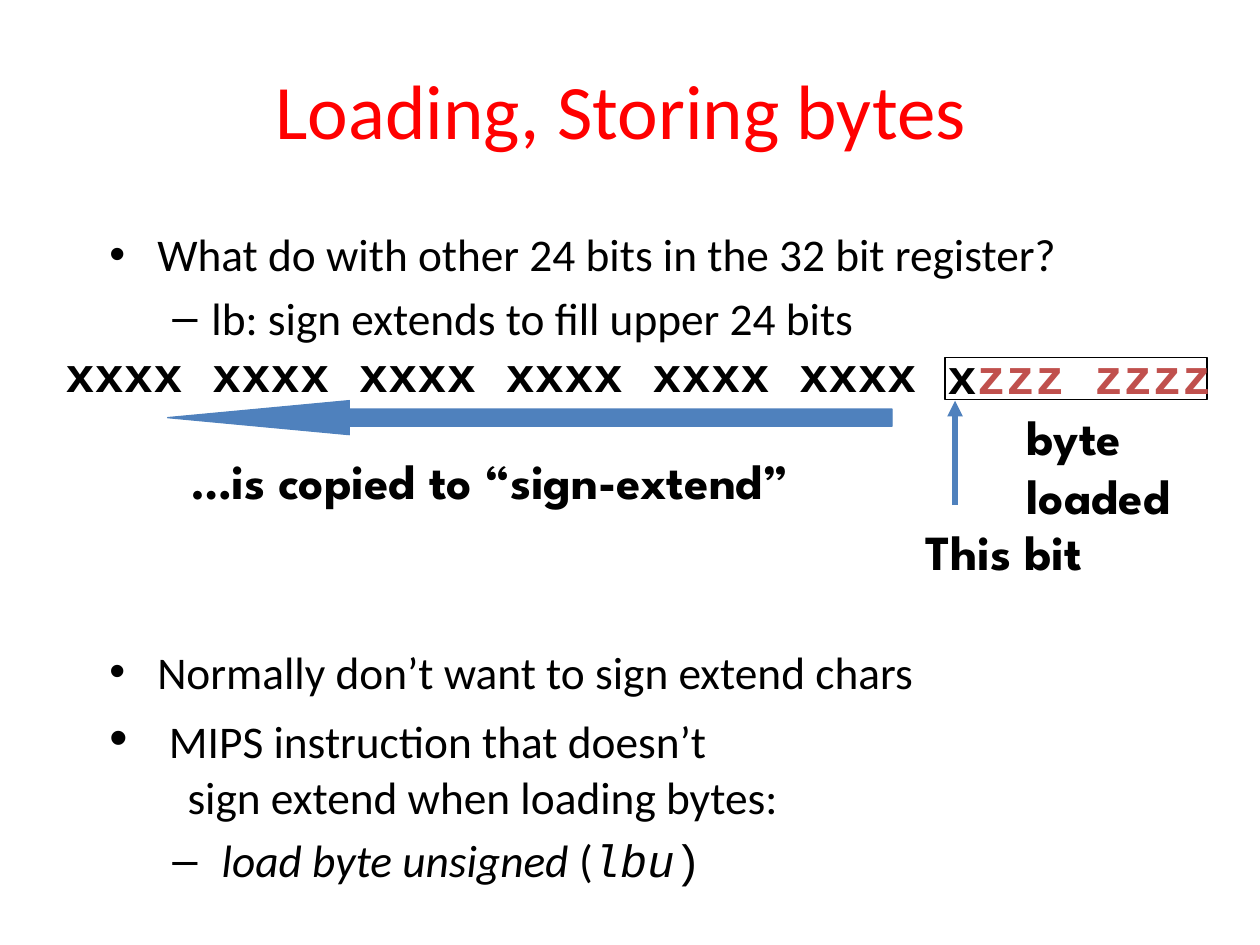
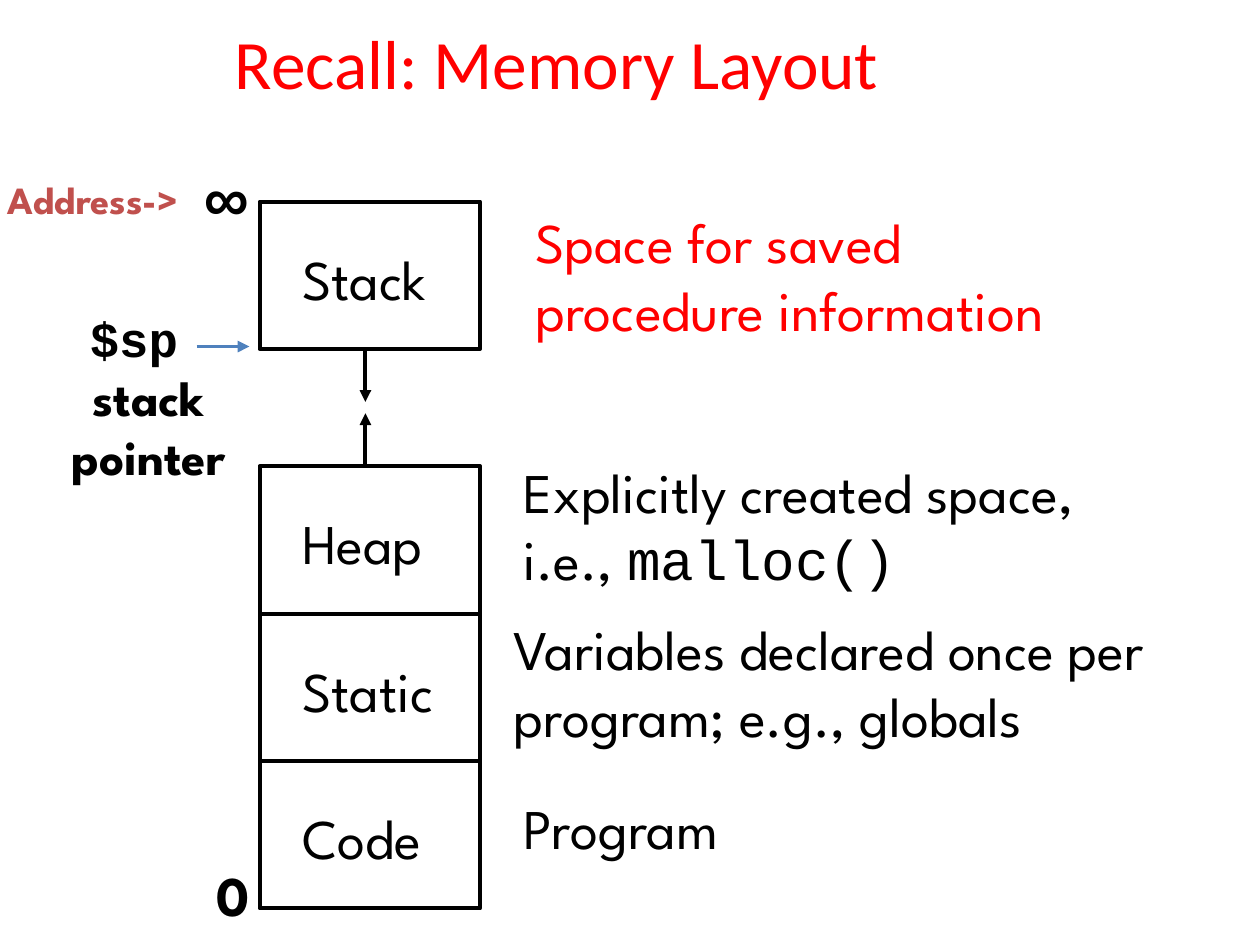
from dataclasses import dataclass
from typing import Any

import lxml.etree
import pptx
import pptx.dml.color
import pptx.enum.shapes
import pptx.enum.text
import pptx.oxml.ns
import pptx.util

PX = 9144  # one px is a hundredth of an inch
COLORS = {"ink": "000000", "red": "FF0000", "rust": "C0504D", "blue": "4F81BD"}
SANS, MONO, HEAD, SIGN = "Calibri", "Courier New", "League Spartan", "Arial"
SHAPES = pptx.enum.shapes.MSO_SHAPE
ALIGN = pptx.enum.text.PP_ALIGN
ANCHOR = pptx.enum.text.MSO_ANCHOR
FIT = pptx.enum.text.MSO_AUTO_SIZE
qn = pptx.oxml.ns.qn


@dataclass
class Bit:
    text: str
    size: float
    font: str = HEAD
    color: str = "ink"
    bold: bool = False
    ital: bool = False


@dataclass
class Para:
    bits: list[Bit]
    align: Any = ALIGN.LEFT
    left: int = 0
    hang: int = 0
    mark: str = ""
    gap: float = 0


@dataclass
class Label:
    x: int
    y: int
    w: int
    h: int
    paras: list[Para]
    wrap: bool = False
    anchor: Any = ANCHOR.TOP


@dataclass
class Zone:
    name: str
    y: int
    width: int
    note: Label


def px(num: int) -> pptx.util.Emu:
    return pptx.util.Emu(num * PX)


def tint(name: str) -> pptx.dml.color.RGBColor:
    return pptx.dml.color.RGBColor.from_string(COLORS[name])


def style(run: Any, bit: Bit) -> None:
    font = run.font
    font.size = pptx.util.Pt(bit.size)
    font.name = bit.font
    font.bold = bit.bold
    font.italic = bit.ital
    font.color.rgb = tint(bit.color)


def fill_para(para: Any, spec: Para) -> None:
    first, *rest = spec.bits
    para.text = first.text
    for run in para.runs:
        style(run, first)
    for bit in rest:
        run = para.add_run()
        run.text = bit.text
        style(run, bit)
    para.alignment = spec.align
    para.space_before = pptx.util.Pt(spec.gap)
    if spec.left:
        props = para._p.get_or_add_pPr()
        props.set("marL", str(px(spec.left)))
        props.set("indent", str(px(-spec.hang)))
        if spec.mark:
            lxml.etree.SubElement(props, qn("a:buFont"), typeface=SIGN)
            lxml.etree.SubElement(props, qn("a:buChar"), char=spec.mark)


def write(slide: Any, label: Label) -> None:
    box = slide.shapes.add_textbox(px(label.x), px(label.y), px(label.w), px(label.h))
    frame = box.text_frame
    frame.word_wrap = label.wrap
    frame.auto_size = FIT.NONE if label.wrap else FIT.SHAPE_TO_FIT_TEXT
    frame.vertical_anchor = label.anchor
    for num, spec in enumerate(label.paras):
        fill_para(frame.add_paragraph() if num else frame.paragraphs[0], spec)


def word(x: int, y: int, w: int, h: int, *bits: Bit) -> Label:
    return Label(x, y, w, h, [Para(list(bits))])


def title(slide: Any, x: int, y: int, w: int, h: int, text: str, size: float) -> None:
    line = Para([Bit(text, size, SANS, "red")], ALIGN.CENTER)
    write(slide, Label(x, y, w, h, [line], True, ANCHOR.MIDDLE))


def block(slide: Any, kind: Any, x: int, y: int, w: int, h: int,
          edge: str, thick: float, fill: str = "") -> Any:
    shape = slide.shapes.add_shape(kind, px(x), px(y), px(w), px(h))
    shape.shadow.inherit = False
    if fill:
        shape.fill.solid()
        shape.fill.fore_color.rgb = tint(fill)
    else:
        shape.fill.background()
    shape.line.color.rgb = tint(edge)
    shape.line.width = pptx.util.Pt(thick)
    return shape


def arrow(slide: Any, x1: int, y1: int, x2: int, y2: int,
          color: str, thick: float) -> None:
    link = slide.shapes.add_connector(
        pptx.enum.shapes.MSO_CONNECTOR.STRAIGHT, px(x1), px(y1), px(x2), px(y2))
    link.line.color.rgb = tint(color)
    link.line.width = pptx.util.Pt(thick)
    lxml.etree.SubElement(link.line._get_or_add_ln(), qn("a:tailEnd"), type="triangle")
    lxml.etree.SubElement(link._element.spPr, qn("a:effectLst"))


def point(*bits: Bit) -> Para:
    return Para(list(bits), left=38, hang=38, mark="•", gap=5)


def dash(*bits: Bit) -> Para:
    return Para(list(bits), left=81, hang=31, mark="–", gap=5)


def plain(text: str, ital: bool = False, font: str = SANS) -> Bit:
    return Bit(text, 25.9, font, ital=ital)


def bytes_slide(slide: Any) -> None:
    title(slide, 68, 36, 850, 100, "Loading, Storing bytes", 44)

    # Bullets above and below the register
    ask = point(plain("What do with other 24 bits in the 32 bit register?"))
    ask.gap = 0
    chars = point(plain("Normally don’t want to sign extend chars"))
    chars.gap = 0
    write(slide, Label(77, 175, 850, 100, [
        ask, dash(plain("lb: sign extends to fill upper 24 bits"))], True))
    write(slide, Label(77, 506, 850, 210, [
        chars,
        point(Bit(" ", 29.6, SANS), plain("MIPS instruction that doesn’t")),
        Para([plain("sign extend when loading bytes:")], left=62),
        dash(plain(" "), plain("load byte unsigned", True), plain(" ("),
             plain("lbu", True, MONO), plain(")", font=MONO)),
    ], True))

    # Register bits, with the loaded byte framed
    block(slide, SHAPES.RECTANGLE, 750, 284, 208, 33, "ink", 0.75)
    write(slide, word(42, 268, 697, 57,
                      Bit(" ".join(["xxxx"] * 6), 28, MONO, bold=True)))
    write(slide, word(742, 269, 230, 57, Bit("x", 28, MONO, bold=True),
                      Bit("zzz zzzz", 28, MONO, "rust", True)))

    # Sign bit copied to the left
    wide = block(slide, SHAPES.LEFT_ARROW, 133, 318, 575, 27, "blue", 0.75, "blue")
    wide.adjustments[1] = 5.34
    arrow(slide, 758, 401, 758, 318, "blue", 3)
    for x, y, w, h, text in (
        (805, 318, 141, 104, "byte\nloaded"),
        (142, 353, 505, 57, "…is copied to “sign-extend”"),
        (725, 409, 146, 57, "This bit"),
    ):
        write(slide, word(x, y, w, h, Bit(text, 28, bold=True)))


def memory_slide(slide: Any) -> None:
    title(slide, 67, 23, 750, 52, "Recall: Memory Layout", 39.6)

    # Memory zones from the top address down
    left, wide, high, mid = 206, 175, 117, 290
    stack, heap = 160, 370
    zones = [
        Zone("Stack", stack, 130, word(415, 160, 456, 118, Bit(
            "Space for saved \nprocedure information", 32, color="red"))),
        Zone("Heap", heap, 130, word(406, 358, 514, 118, Bit(
            "Explicitly created space, \ni.e., ", 32), Bit("malloc()", 32, MONO))),
        Zone("Static", heap + high, 130, word(398, 483, 587, 118, Bit(
            "Variables declared once per \nprogram; e.g., globals", 32))),
        Zone("Code", heap + 2 * high, 125, word(406, 625, 192, 64, Bit(
            "Program", 32))),
    ]
    for zone in zones:
        block(slide, SHAPES.RECTANGLE, left, zone.y, wide, high, "ink", 2.25)
        write(slide, word(left + 24, zone.y + 29, zone.width, 64, Bit(zone.name, 32)))
        write(slide, zone.note)

    # Stack and heap grow toward each other
    arrow(slide, mid, stack + high, mid, stack + high + 42, "ink", 2.25)
    arrow(slide, mid, heap, mid, heap - 42, "ink", 2.25)

    # Address scale
    write(slide, word(162, 678, 47, 64, Bit("0", 32, bold=True)))
    write(slide, word(152, 121, 56, 71, Bit("∞", 36, SIGN, bold=True)))
    write(slide, word(-4, 135, 172, 47, Bit("Address->", 22, color="rust", bold=True)))

    # Stack pointer
    lines = (("$sp ", MONO), ("stack", HEAD), ("pointer", HEAD))
    write(slide, Label(46, 240, 144, 150, [
        Para([Bit(text, 28, font, bold=True)], ALIGN.CENTER) for text, font in lines]))
    arrow(slide, 156, 275, 198, 275, "blue", 2.25)


def main() -> None:
    deck = pptx.Presentation()
    deck.slide_width, deck.slide_height = px(1000), px(750)
    for draw in (bytes_slide, memory_slide):
        draw(deck.slides.add_slide(deck.slide_layouts[6]))
    deck.save("out.pptx")


if __name__ == "__main__":
    main()
